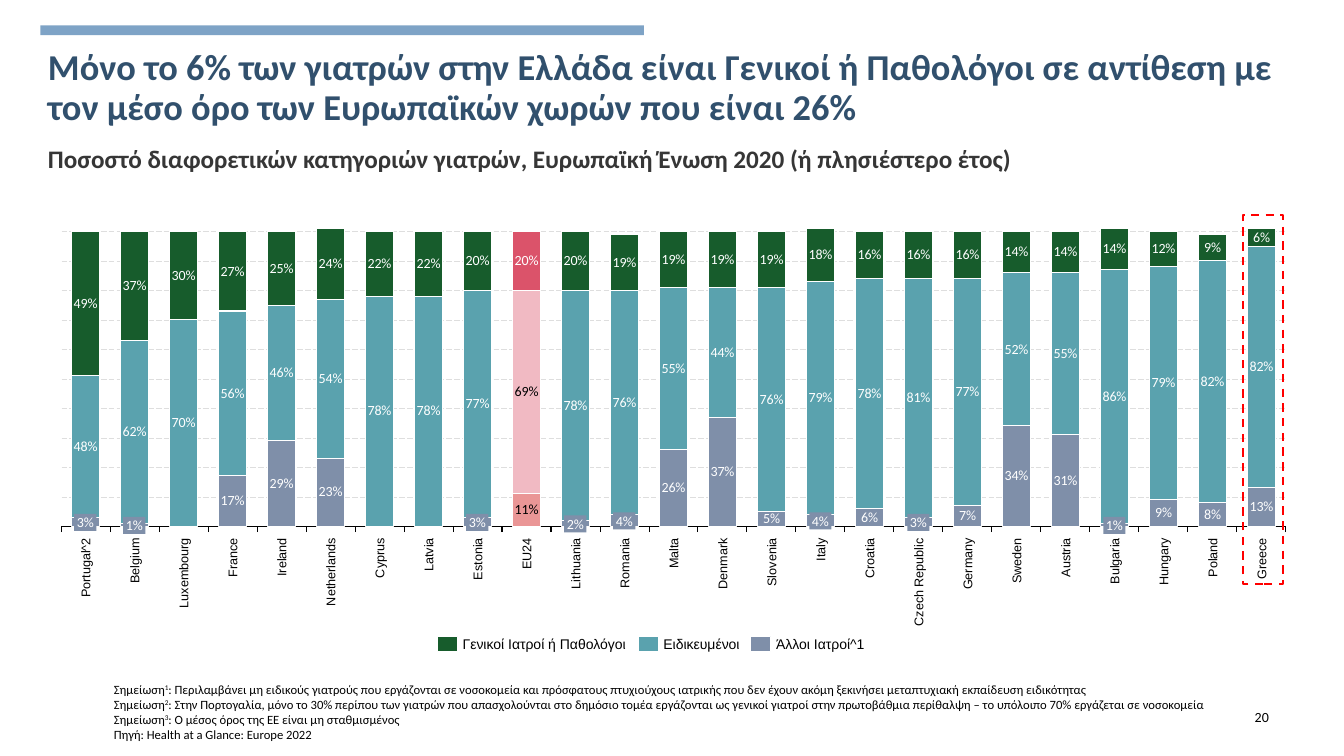
"""Build the slide on doctor categories across the European Union."""
import pptx
import pptx.chart.data
import pptx.dml.color
import pptx.enum.chart
import pptx.enum.dml
import pptx.enum.shapes
import pptx.enum.text
import pptx.util
from lxml import etree
from pptx.oxml import parse_xml
from pptx.oxml.ns import nsdecls, qn

Cm, Pt = pptx.util.Cm, pptx.util.Pt
RGB = pptx.dml.color.RGBColor
ALIGN, ANCHOR = pptx.enum.text.PP_ALIGN, pptx.enum.text.MSO_ANCHOR
DASH = pptx.enum.dml.MSO_LINE
RECT = pptx.enum.shapes.MSO_SHAPE.RECTANGLE

BLACK, WHITE, RED = RGB(0, 0, 0), RGB(255, 255, 255), RGB(255, 0, 0)
NAVY, CHARCOAL = RGB(0x31, 0x50, 0x6D), RGB(0x36, 0x36, 0x36)
BAR_BLUE, GRID = RGB(0x7E, 0xA3, 0xC6), RGB(0xDE, 0xDE, 0xDE)
GREEN, TEAL, SLATE = RGB(0x17, 0x5C, 0x2C), RGB(0x5A, 0xA2, 0xAE), RGB(0x7F, 0x8F, 0xA9)
EU_COLORS = [RGB(0xEA, 0x96, 0x96), RGB(0xF1, 0xBA, 0xC3), RGB(0xDB, 0x53, 0x6A)]

TITLE = ("Μόνο το 6% των γιατρών στην Ελλάδα είναι Γενικοί ή Παθολόγοι σε αντίθεση με "
         "τον μέσο όρο των Ευρωπαϊκών χωρών που είναι 26%")
SUBTITLE = "Ποσοστό διαφορετικών κατηγοριών γιατρών, Ευρωπαϊκή Ένωση 2020 (ή πλησιέστερο έτος)"
PAGE = "20"
NOTES = [
    ("Σημείωση", "1", ": Περιλαμβάνει μη ειδικούς γιατρούς που εργάζονται σε νοσοκομεία και πρόσφατους "
     "πτυχιούχους ιατρικής που δεν έχουν ακόμη ξεκινήσει μεταπτυχιακή εκπαίδευση ειδικότητας"),
    ("Σημείωση", "2", ": Στην Πορτογαλία, μόνο το 30% περίπου των γιατρών που απασχολούνται στο δημόσιο τομέα "
     "εργάζονται ως γενικοί γιατροί στην πρωτοβάθμια περίθαλψη – το υπόλοιπο 70% εργάζεται σε νοσοκομεία"),
    ("Σημείωση", "3", ": Ο μέσος όρος της ΕΕ είναι μη σταθμισμένος"),
    ("Πηγή: Health at a Glance: Europe 2022",),
]
COUNTRIES = [
    ("Portugal^2", 1.5, 3, 48, 49), ("Belgium", 1.14, 1, 62, 37), ("Luxembourg", 1.75, 70, 30, None),
    ("France", 0.99, 17, 56, 27), ("Ireland", 0.97, 29, 46, 25), ("Netherlands", 1.7, 23, 54, 24),
    ("Cyprus", 1.02, 78, 22, None), ("Latvia", 0.84, 78, 22, None), ("Estonia", 1.07, 3, 77, 20),
    ("EU24", 0.79, 11, 69, 20), ("Lithuania", 1.3, 2, 78, 20), ("Romania", 1.27, 4, 76, 19),
    ("Malta", 0.79, 26, 55, 19), ("Denmark", 1.3, 37, 44, 19), ("Slovenia", 1.22, 5, 76, 19),
    ("Italy", 0.58, 4, 79, 18), ("Croatia", 1.02, 6, 78, 16), ("Czech Republic", 2.24, 3, 81, 16),
    ("Germany", 1.3, 7, 77, 16), ("Sweden", 1.14, 34, 52, 14), ("Austria", 0.99, 31, 55, 14),
    ("Bulgaria", 1.17, 1, 86, 14), ("Hungary", 1.19, 9, 79, 12), ("Poland", 0.99, 8, 82, 9),
    ("Greece", 1.04, 13, 82, 6),
]
LEGEND = [("Γενικοί Ιατροί ή Παθολόγοι", GREEN, 11.02, 4.11), ("Ειδικευμένοι", TEAL, 16.08, 1.93),
          ("Άλλοι Ιατροί^1", SLATE, 18.92, 2.24)]
SERIES_COLORS = [SLATE, TEAL, GREEN]
BADGE_LIMIT = 5
FIRST_X, LAST_X = 2.15, 31.79
BASE_Y, POINT_H = 13.28, 0.0743
GRID_BOTTOM, GRID_TOP, GRID_COUNT = 12.52, 5.84, 10


def apply(obj, **values):
    for name, value in values.items():
        setattr(obj, name, value)


def color_font(font, color, **values):
    apply(font, **values)
    font.color.rgb = color


def write(tf, paragraphs, size, color=BLACK, font="Calibri", bold=False, ins=(0, 0, 0, 0),
          align=ALIGN.LEFT, anchor=ANCHOR.MIDDLE, wrap=True, spacing=None):
    sides = ("margin_left", "margin_top", "margin_right", "margin_bottom")
    apply(tf, word_wrap=wrap, vertical_anchor=anchor, **dict(zip(sides, map(Cm, ins))))
    for i, parts in enumerate(paragraphs):
        p = tf.add_paragraph() if i else tf.paragraphs[0]
        apply(p, alignment=align, line_spacing=spacing)
        for j, part in enumerate(parts):
            r = p.add_run()
            r.text = part
            color_font(r.font, color, size=Pt(size), name=font, bold=bold)
            if j == 1:
                r.font._element.set("baseline", "30000")


def add_text(s, box, paragraphs, size, vert=None, **style):
    tf = s.shapes.add_textbox(*map(Cm, box)).text_frame
    write(tf, paragraphs, size, **style)
    if vert:
        tf._txBody.bodyPr.set("vert", vert)


def add_rect(s, box, fill=None, line=None, width=0.75, dash=None):
    sp = s.shapes.add_shape(RECT, *map(Cm, box))
    sp.shadow.inherit = False
    if fill is None:
        sp.fill.background()
    else:
        sp.fill.solid()
        sp.fill.fore_color.rgb = fill
    if line is None:
        sp.line.fill.background()
    else:
        sp.line.color.rgb = line
        apply(sp.line, width=Pt(width), dash_style=dash)
    return sp


def add_gridlines(s):
    step = (GRID_BOTTOM - GRID_TOP) / (GRID_COUNT - 1)
    for i in range(GRID_COUNT):
        y = Cm(GRID_BOTTOM - i * step)
        line = s.shapes.add_connector(pptx.enum.shapes.MSO_CONNECTOR.STRAIGHT, Cm(1.55), y, Cm(32.41), y)
        line.line.color.rgb = GRID
        apply(line.line, width=Pt(0.5), dash_style=DASH.LONG_DASH)
        etree.SubElement(line._element.spPr, qn("a:effectLst"))


def paint(fmt, color):
    fmt.fill.solid()
    fmt.fill.fore_color.rgb = color
    fmt.line.color.rgb = WHITE
    fmt.line.width = Pt(0.75)


def add_doctor_chart(s):
    names, _, *columns = zip(*COUNTRIES)
    data = pptx.chart.data.CategoryChartData(number_format='0"%"')
    data.categories = names
    for (label, *_), values in zip(reversed(LEGEND), columns):
        data.add_series(label, values)
    kind = pptx.enum.chart.XL_CHART_TYPE.COLUMN_STACKED
    chart = s.shapes.add_chart(kind, Cm(1.32), Cm(4.47), Cm(31.34), Cm(9.42), data).chart
    apply(chart, has_legend=False, has_title=False)
    color_font(chart.font, BLACK, size=Pt(10), name="Calibri")
    plot = chart.plots[0]
    apply(plot, gap_width=80, overlap=100, vary_by_categories=False)
    tick, no_labels = pptx.enum.chart.XL_TICK_MARK, pptx.enum.chart.XL_TICK_LABEL_POSITION.NONE
    hidden = dict(tick_label_position=no_labels, minor_tick_mark=tick.NONE, has_major_gridlines=False)
    apply(chart.category_axis, major_tick_mark=tick.OUTSIDE, **hidden)
    apply(chart.value_axis, major_tick_mark=tick.NONE, minimum_scale=0, maximum_scale=110, **hidden)
    chart.category_axis.format.line.color.rgb = BLACK
    chart.category_axis.format.line.width = Pt(0.75)
    chart.value_axis.format.line.fill.background()

    area = chart._chartSpace.chart.plotArea
    for old in area.findall(qn("c:layout")):
        area.remove(old)
    frame = dict(x=0.007, y=0.066, w=0.985, h=0.867)
    parts = "".join(f'<c:{k}Mode val="edge"/>' for k in "xy")
    parts += "".join(f'<c:{k} val="{v}"/>' for k, v in frame.items())
    area.insert(0, parse_xml(f'<c:layout {nsdecls("c")}><c:manualLayout><c:layoutTarget val="inner"/>'
                             f'{parts}</c:manualLayout></c:layout>'))

    eu = names.index("EU24")
    for k, (ser, color, values) in enumerate(zip(plot.series, SERIES_COLORS, columns)):
        paint(ser.format, color)
        paint(ser.points[eu].format, EU_COLORS[k])
        labels = ser.data_labels
        apply(labels, show_value=True, number_format='0"%"', number_format_is_linked=False)
        color_font(labels.font, WHITE, size=Pt(10), name="Calibri")
        if k < 2:
            color_font(ser.points[eu].data_label.font, BLACK, size=Pt(10), name="Calibri")
            label = labels._element.find(qn("c:dLbl"))
            label.insert(1, parse_xml(f'<c:numFmt {nsdecls("c")} formatCode="0&quot;%&quot;" sourceLinked="0"/>'))
        for i, value in enumerate(values):
            if k < 2 and columns[2][i] is None:
                paint(ser.points[i].format, SERIES_COLORS[k + 1])
            if k == 0 and value < BADGE_LIMIT:
                ser.points[i].data_label.font.size = Pt(10)
                label = labels._element.xpath(f'c:dLbl[c:idx/@val="{i}"]')[0]
                for child in list(label)[1:]:
                    label.remove(child)
                etree.SubElement(label, qn("c:delete")).set("val", "1")


def add_country_labels(s):
    step = (LAST_X - FIRST_X) / (len(COUNTRIES) - 1)
    for i, (name, height, others, *_) in enumerate(COUNTRIES):
        x = FIRST_X + i * step
        add_text(s, (x - 0.19, 13.56, 0.38, height), [[name]], 9, vert="vert270",
                 font="Arial", align=ALIGN.RIGHT, wrap=False)
        if others < BADGE_LIMIT:
            y = BASE_Y - others / 2 * POINT_H
            sp = add_rect(s, (x - 0.28, y - 0.22, 0.56, 0.43), SLATE)
            write(sp.text_frame, [[f"{others}%"]], 10, WHITE, ins=(0.05, 0, 0.05, 0),
                  align=ALIGN.CENTER, wrap=False)


def main():
    prs = pptx.Presentation()
    apply(prs, slide_width=Cm(33.87), slide_height=Cm(19.05))
    s = prs.slides.add_slide(prs.slide_layouts[6])
    heading = dict(bold=True, ins=(0.3, 0.13, 0.25, 0.13))
    add_rect(s, (1.02, 0.64, 15.21, 0.25), BAR_BLUE)
    add_text(s, (0.91, 1.12, 31.52, 2.31), [[TITLE]], 26, color=NAVY, anchor=ANCHOR.TOP, spacing=0.9, **heading)
    add_text(s, (31.37, 17.7, 1.45, 0.71), [[PAGE]], 10, ins=(0.25,) * 4)
    add_text(s, (0.91, 3.48, 31.52, 1.02), [[SUBTITLE]], 18, color=CHARCOAL, **heading)
    add_gridlines(s)
    add_doctor_chart(s)
    add_country_labels(s)
    add_text(s, (2.62, 17.07, 28.65, 1.75), NOTES, 9, ins=(0.25, 0.13, 0.25, 0.13))
    add_rect(s, (31.32, 5.41, 1.02, 9.3), line=RED, width=1.5, dash=DASH.DASH)
    for label, color, x, width in LEGEND:
        add_rect(s, (x, 16.03, 0.51, 0.38), color, WHITE)
        add_text(s, (x + 0.64, 16, width, 0.43), [[label]], 10, font="Arial", wrap=False)
    prs.save("out.pptx")


if __name__ == "__main__":
    main()
